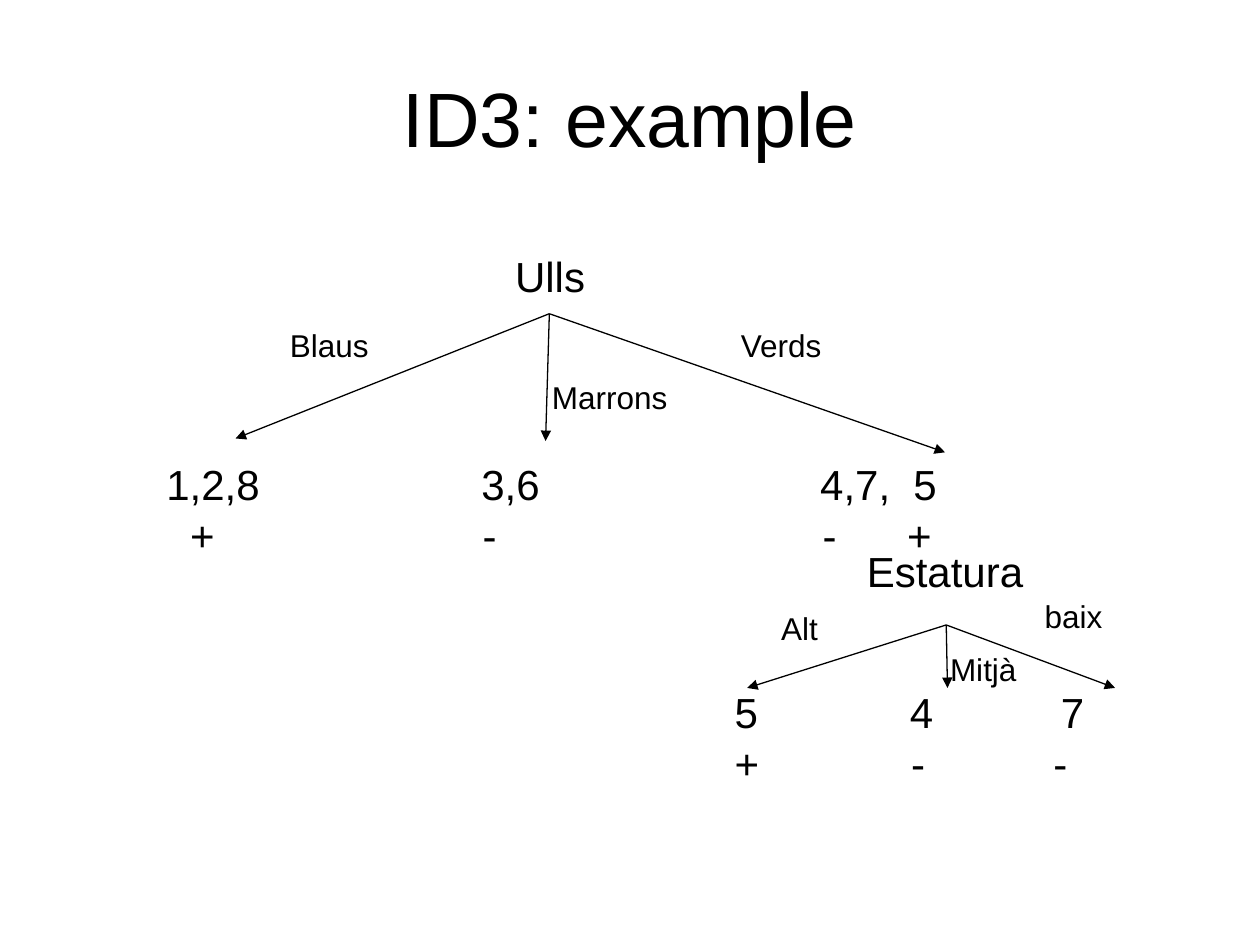
from dataclasses import dataclass

from lxml import etree
from pptx import Presentation
from pptx.dml.color import RGBColor
from pptx.enum import shapes, text
from pptx.oxml.ns import qn
from pptx.util import Inches, Pt

COLOURS = {"ink": "000000", "page": "FFFFFF"}
FONT = "Arial"
INSET = 0.04


@dataclass(frozen=True)
class Line:
    words: str
    tabs: tuple[float, ...] = ()


@dataclass(frozen=True)
class Label:
    lines: tuple[Line, ...]
    left: float
    top: float
    width: float
    height: float
    size: int
    centred: bool = False
    wrap: bool = False
    middle: bool = False


@dataclass(frozen=True)
class Fork:
    """A tree node's foot and the arrow tips of its branches."""
    foot: tuple[float, float]
    tips: tuple[tuple[float, float], ...]


def node(words: str, left: float, top: float, width: float) -> Label:
    return Label((Line(words),), left, top, width, 0.4, 24, centred=True)


def branch(words: str, left: float, top: float, width: float) -> Label:
    return Label((Line(words),), left, top, width, 0.3, 18)


def leaves(lines: tuple[Line, ...], left: float, top: float, width: float) -> Label:
    return Label(lines, left, top, width, 0.81, 24, wrap=True)


LABELS = (
    Label((Line("ID3: example"),), 0.5, 0.1, 9, 1.65, 44,
          centred=True, wrap=True, middle=True),
    node("Ulls", 4.04, 1.99, 0.65),
    branch("Blaus", 2.26, 2.59, 0.72),
    branch("Marrons", 4.34, 3, 1.01),
    branch("Verds", 5.84, 2.59, 0.73),
    leaves((Line("1,2,8\t3,6\t4,7,\t5", (2.5, 5.19, 5.93)),
            Line("\t+\t-\t-\t+", (0.19, 2.51, 5.21, 5.88))), 1.28, 3.64, 6.24),
    node("Estatura", 6.83, 4.33, 1.34),
    branch("Alt", 6.16, 4.83, 0.38),
    branch("Mitjà", 7.5, 5.16, 0.62),
    branch("baix", 8.25, 4.74, 0.55),
    leaves((Line("5\t4\t7", (1.39, 2.59)),
            Line("+\t-\t-", (1.4, 2.53))), 5.79, 5.45, 2.88),
)

FORKS = (
    Fork((4.36, 2.49), ((1.87, 3.48), (4.33, 3.5), (7.5, 3.59))),
    Fork((7.51, 4.96), ((5.93, 5.46), (7.52, 5.46), (8.85, 5.46))),
)


def colour(name: str) -> RGBColor:
    return RGBColor.from_string(COLOURS[name])


def set_tabs(para, stops: tuple[float, ...]) -> None:
    """Add left tab stops, in inches from the start of the text."""
    tab_list = etree.SubElement(para._p.get_or_add_pPr(), qn("a:tabLst"))
    for stop in stops:
        etree.SubElement(tab_list, qn("a:tab"), pos=str(Inches(stop)), algn="l")


def draw_label(page, label: Label) -> None:
    box = page.shapes.add_textbox(Inches(label.left), Inches(label.top),
                                  Inches(label.width), Inches(label.height))
    frame = box.text_frame
    frame.word_wrap = label.wrap
    frame.auto_size = (text.MSO_AUTO_SIZE.NONE if label.middle
                       else text.MSO_AUTO_SIZE.SHAPE_TO_FIT_TEXT)
    frame.vertical_anchor = text.MSO_ANCHOR.MIDDLE if label.middle else text.MSO_ANCHOR.TOP
    frame.margin_left = frame.margin_right = Inches(INSET)
    frame.margin_top = frame.margin_bottom = Inches(0)
    for index, line in enumerate(label.lines):
        para = frame.add_paragraph() if index else frame.paragraphs[0]
        para.alignment = text.PP_ALIGN.CENTER if label.centred else text.PP_ALIGN.LEFT
        if line.tabs:
            set_tabs(para, line.tabs)
        span = para.add_run()
        span.text = line.words
        span.font.name = FONT
        span.font.size = Pt(label.size)
        span.font.color.rgb = colour("ink")


def draw_fork(page, fork: Fork) -> None:
    for tip in fork.tips:
        arrow = page.shapes.add_connector(shapes.MSO_CONNECTOR.STRAIGHT,
                                          *map(Inches, fork.foot + tip))
        arrow.line.color.rgb = colour("ink")
        arrow.line.width = Pt(0.75)
        etree.SubElement(arrow.line._get_or_add_ln(), qn("a:tailEnd"), type="triangle")
        etree.SubElement(arrow._element.spPr, qn("a:effectLst"))


def main() -> None:
    deck = Presentation()
    deck.slide_width, deck.slide_height = Inches(10), Inches(7.5)
    page = deck.slides.add_slide(deck.slide_layouts[6])
    page.background.fill.solid()
    page.background.fill.fore_color.rgb = colour("page")
    for fork in FORKS:
        draw_fork(page, fork)
    for label in LABELS:
        draw_label(page, label)
    deck.save("out.pptx")


if __name__ == "__main__":
    main()
